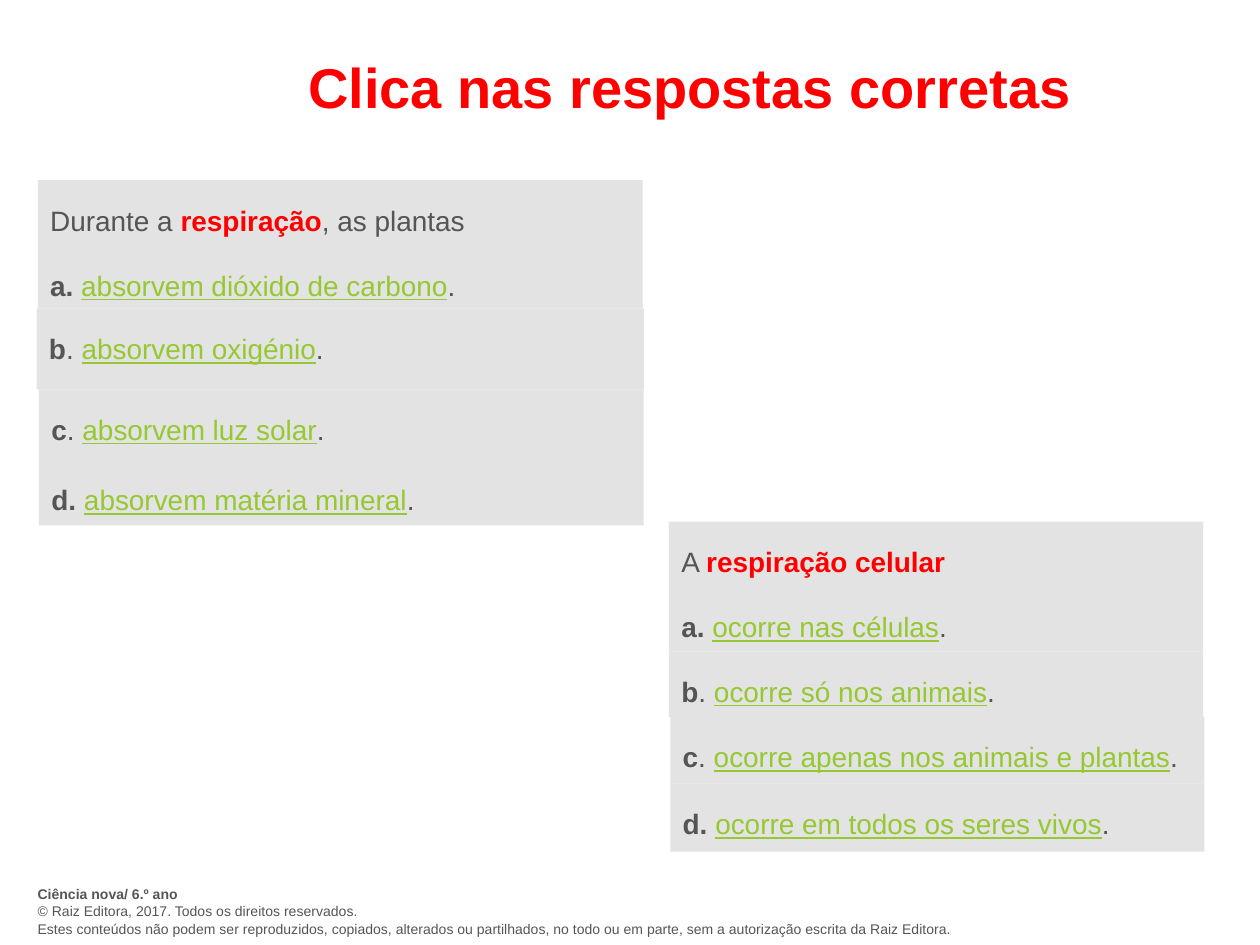
from dataclasses import dataclass

from lxml.etree import SubElement
from pptx import Presentation
from pptx.dml.color import RGBColor
from pptx.enum.shapes import MSO_SHAPE
from pptx.enum.text import MSO_ANCHOR, PP_ALIGN
from pptx.oxml.ns import qn
from pptx.util import Inches, Pt


@dataclass(frozen=True)
class Theme:
    font: str = "Arial"
    body: RGBColor = RGBColor(0x55, 0x55, 0x55)
    accent: RGBColor = RGBColor(0xFF, 0x00, 0x00)
    answer: RGBColor = RGBColor(0x96, 0xC8, 0x32)
    panel: RGBColor = RGBColor(0xDD, 0xDD, 0xDD)
    panel_opacity: int = 80
    title_size: int = 32
    body_size: int = 16
    footer_size: int = 8
    line_spacing: float = 1.5
    question_gap: float = 8.4


class QuizSlide:
    def __init__(self, slide, theme):
        self.slide = slide
        self.theme = theme

    def add_text(self, paragraph, text, size, color, bold=False, underline=False):
        run = paragraph.add_run()
        run.text = text
        run.font.name = self.theme.font
        run.font.size = Pt(size)
        run.font.color.rgb = color
        run.font.bold = bold
        run.font.underline = underline

    def textbox(self, left, top, width, height):
        box = self.slide.shapes.add_textbox(
            Inches(left), Inches(top), Inches(width), Inches(height))
        box.text_frame.word_wrap = True
        return box.text_frame

    def title(self, text, *place):
        frame = self.textbox(*place)
        frame.vertical_anchor = MSO_ANCHOR.MIDDLE
        heading = frame.paragraphs[0]
        heading.alignment = PP_ALIGN.CENTER
        self.add_text(heading, text, self.theme.title_size, self.theme.accent, bold=True)

    def footer(self, lines, *place):
        frame = self.textbox(*place)
        for index, (text, bold) in enumerate(lines):
            line = frame.add_paragraph() if index else frame.paragraphs[0]
            self.add_text(line, text, self.theme.footer_size, self.theme.body, bold)

    def panel(self, left, top, width, height):
        panel = self.slide.shapes.add_shape(
            MSO_SHAPE.RECTANGLE,
            Inches(left), Inches(top), Inches(width), Inches(height))
        panel.shadow.inherit = False
        panel.line.fill.background()
        panel.fill.solid()
        panel.fill.fore_color.rgb = self.theme.panel
        color = panel.element.spPr.find(qn("a:solidFill"))[0]
        SubElement(color, qn("a:alpha"), val=str(self.theme.panel_opacity * 1000))
        frame = panel.text_frame
        frame.word_wrap = True
        frame.vertical_anchor = MSO_ANCHOR.TOP
        return frame

    def body_line(self, paragraph, *pieces):
        paragraph.alignment = PP_ALIGN.JUSTIFY
        paragraph.line_spacing = self.theme.line_spacing
        for text, color, bold, underline in pieces:
            self.add_text(paragraph, text, self.theme.body_size, color, bold, underline)

    def option(self, paragraph, letter, separator, answer):
        body = self.theme.body
        pieces = [(letter, body, True, False)]
        if separator:
            pieces.append((separator, body, False, False))
        pieces += [(answer, self.theme.answer, False, True), (".", body, False, False)]
        self.body_line(paragraph, *pieces)

    def question(self, opening, keyword, ending, answers, places):
        body = self.theme.body
        markers = [("a. ", ""), ("b", ". "), ("c", ". "), ("d. ", "")]
        for index, (marker, answer, place) in enumerate(zip(markers, answers, places)):
            frame = self.panel(*place)
            paragraph = frame.paragraphs[0]
            if index == 0:
                pieces = [(opening, body, False, False),
                          (keyword, self.theme.accent, True, False)]
                if ending:
                    pieces.append((ending, body, False, False))
                self.body_line(paragraph, *pieces)
                paragraph = frame.add_paragraph()
                paragraph.space_before = Pt(self.theme.question_gap)
            self.option(paragraph, *marker, answer)


def main():
    presentation = Presentation()
    presentation.slide_width = Inches(10)
    presentation.slide_height = Inches(7.5)
    quiz = QuizSlide(
        presentation.slides.add_slide(presentation.slide_layouts[6]), Theme())

    quiz.footer(
        [("Ciência nova/ 6.º ano", True),
         ("© Raiz Editora, 2017. Todos os direitos reservados.", False)],
        0.2, 6.98, 9.61, 0.37)
    quiz.footer(
        [("Estes conteúdos não podem ser reproduzidos, copiados, alterados ou "
          "partilhados, no todo ou em parte, sem a autorização escrita da "
          "Raiz Editora.", False)],
        0.2, 7.26, 9.45, 0.24)
    quiz.title("Clica nas respostas corretas", 1.3, 0.25, 8.35, 0.87)

    quiz.question(
        "Durante a ", "respiração", ", as plantas",
        ["absorvem dióxido de carbono", "absorvem oxigénio",
         "absorvem luz solar", "absorvem matéria mineral"],
        [(0.3, 1.43, 4.8, 1.02), (0.29, 2.45, 4.82, 0.64),
         (0.31, 3.09, 4.8, 0.56), (0.31, 3.65, 4.8, 0.52)])
    quiz.question(
        "A ", "respiração celular", "",
        ["ocorre nas células", "ocorre só nos animais",
         "ocorre apenas nos animais e plantas", "ocorre em todos os seres vivos"],
        [(5.31, 4.14, 4.24, 1.03), (5.31, 5.17, 4.24, 0.52),
         (5.32, 5.69, 4.24, 0.53), (5.32, 6.22, 4.24, 0.54)])

    presentation.save("out.pptx")


if __name__ == "__main__":
    main()
